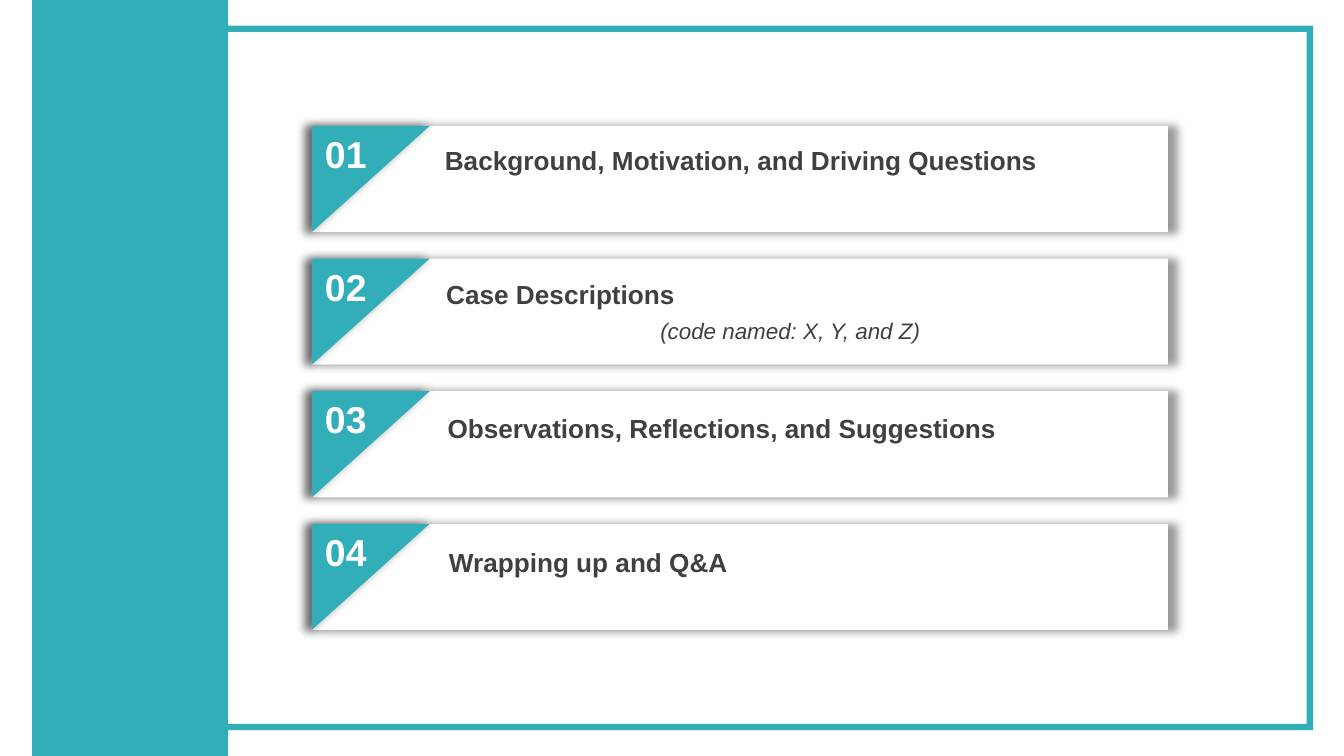
from lxml import etree
from pptx import Presentation
from pptx import util as u
from pptx.dml import color
from pptx.enum import shapes, text
from pptx.oxml import ns

WIDTH = 10
HEIGHT = WIDTH * 9 / 16
TEAL, WHITE, INK, BLACK = "32AEB8", "FFFFFF", "404040", "000000"
AGENDA = [
    ("Background, Motivation, and Driving Questions", None),
    ("Case Descriptions", "(code named: X, Y, and Z)"),
    ("Observations, Reflections, and Suggestions", None),
    ("Wrapping up and Q&A", None),
]


def rgb(value):
    return color.RGBColor.from_string(value)


def add_block(parent, kind, box, fill):
    block = parent.add_shape(kind, *map(u.Inches, box))
    block.fill.solid()
    block.fill.fore_color.rgb = rgb(fill)
    block.line.fill.background()
    block.shadow.inherit = False
    return block


def add_glow(block):
    effects = block._element.spPr.find(ns.qn("a:effectLst"))
    shadow = etree.SubElement(
        effects, ns.qn("a:outerShdw"), blurRad=str(u.Pt(5)), dist="0",
        sx="102000", sy="102000", algn="ctr", rotWithShape="0")
    tint = etree.SubElement(shadow, ns.qn("a:srgbClr"), val=BLACK)
    etree.SubElement(tint, ns.qn("a:alpha"), val="40000")


def add_text(parent, box, words, size, ink, bold=False, italic=False,
             align=text.PP_ALIGN.LEFT):
    frame = parent.add_textbox(*map(u.Inches, box)).text_frame
    frame.word_wrap = True
    frame.auto_size = text.MSO_AUTO_SIZE.SHAPE_TO_FIT_TEXT
    para = frame.paragraphs[0]
    para.alignment = align
    span = para.add_run()
    span.text = words
    span.font.name = "Arial"
    span.font.size = u.Pt(size)
    span.font.bold = bold
    span.font.italic = italic
    span.font.color.rgb = rgb(ink)


def add_border(page, box):
    left, top, width, height = box
    margin = height * 0.034
    border = add_block(page.shapes, shapes.MSO_SHAPE.FRAME,
                       (left, top + margin, width, height - 2 * margin), TEAL)
    border.adjustments[0] = 0.009
    add_block(page.shapes, shapes.MSO_SHAPE.RECTANGLE,
              (left, top, width * 0.153, height), TEAL)


def add_card(page, box, index, title, note):
    left, top, width, height = box
    parts = page.shapes.add_group_shape().shapes
    add_glow(add_block(parts, shapes.MSO_SHAPE.RECTANGLE, box, WHITE))

    corner = height * 1.11
    shift = (corner - height) / 2
    flag = add_block(parts, shapes.MSO_SHAPE.RIGHT_TRIANGLE,
                     (left + shift, top - shift, height, corner), TEAL)
    flag.rotation = 90
    add_glow(flag)

    add_text(parts, (left, top - 0.01, width * 0.1, 0.44),
             f"{index + 1:02d}", 20, WHITE, bold=True)
    drift = 0.01 * index
    text_left = left + width * 0.14 + drift
    text_width = width * 0.835
    add_text(parts, (text_left, top + height * 0.11 + drift, text_width, 0.34),
             title, 14, INK, bold=True)
    if note:
        add_text(parts, (text_left, top + height * 0.49, text_width, 0.3),
                 note, 12, INK, italic=True, align=text.PP_ALIGN.CENTER)


def add_agenda(page, box, entries):
    left, top, width, height = box
    pitch = height / (len(entries) - 0.2)
    for index, (title, note) in enumerate(entries):
        add_card(page, (left, top + index * pitch, width, pitch * 0.8),
                 index, title, note)


def main():
    deck = Presentation()
    deck.slide_width = u.Inches(WIDTH)
    deck.slide_height = u.Inches(HEIGHT)
    page = deck.slides.add_slide(deck.slide_layouts[6])
    add_border(page, (WIDTH * 0.024, 0, WIDTH * 0.953, HEIGHT))
    add_agenda(page, (2.32, HEIGHT / 6, WIDTH * 0.637, HEIGHT * 2 / 3), AGENDA)
    deck.save("out.pptx")


if __name__ == "__main__":
    main()
